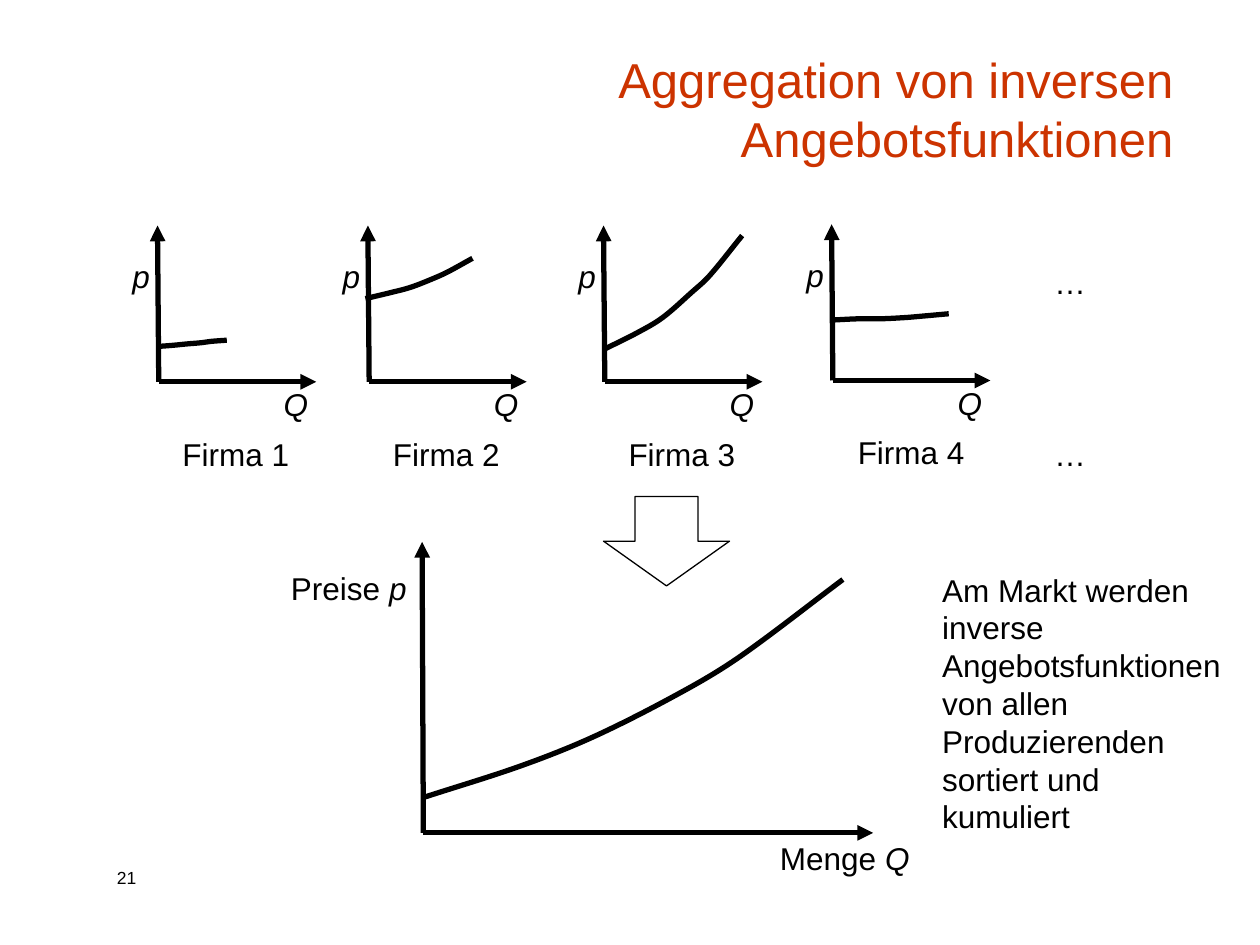
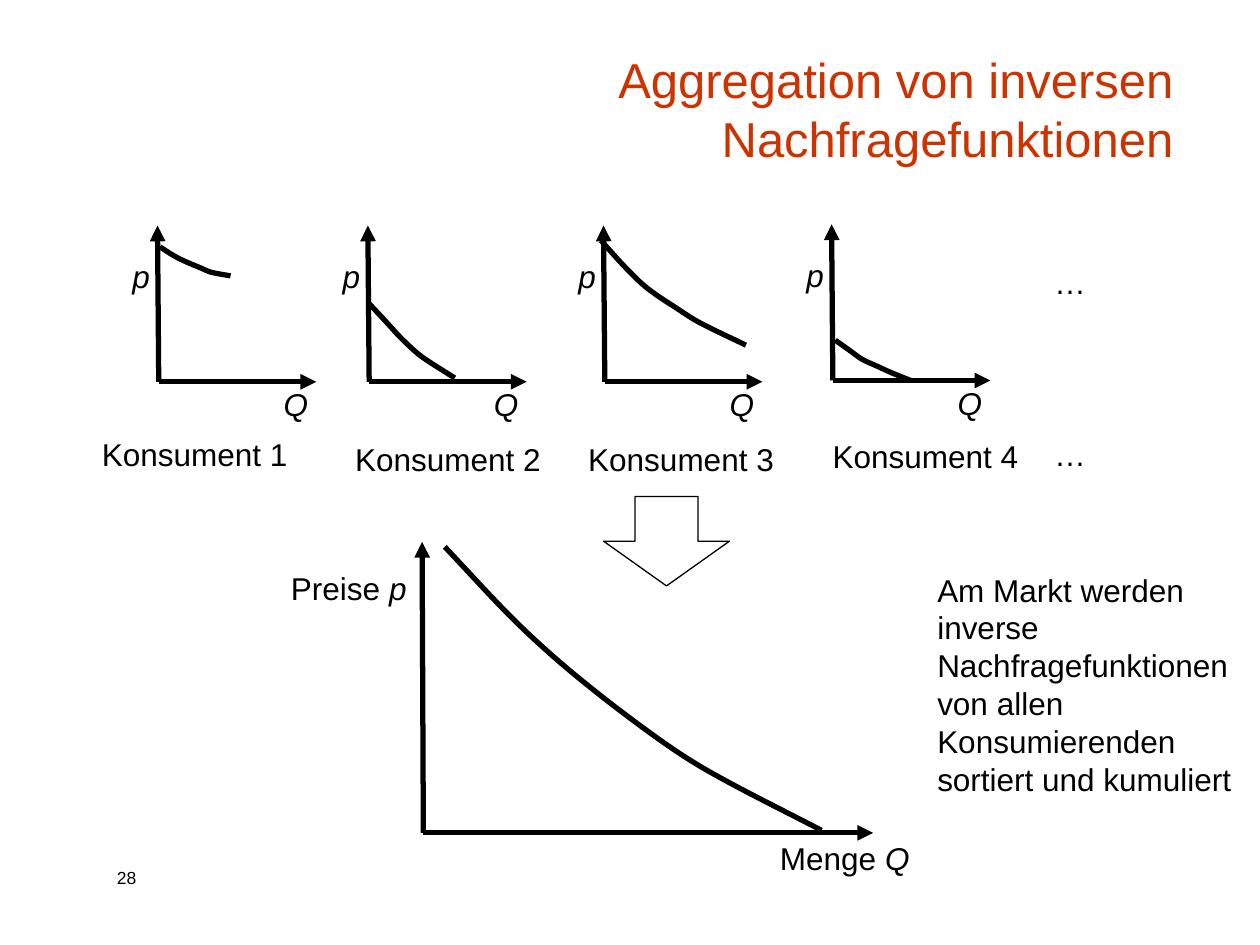
from dataclasses import dataclass

from lxml import etree
from pptx import Presentation
from pptx.dml.color import RGBColor
from pptx.enum.shapes import MSO_CONNECTOR, MSO_SHAPE
from pptx.enum.text import MSO_ANCHOR, PP_ALIGN
from pptx.oxml.ns import qn
from pptx.util import Inches, Pt

STRAIGHT = MSO_CONNECTOR.STRAIGHT
DOWN_ARROW = MSO_SHAPE.DOWN_ARROW
TOP, BOTTOM = MSO_ANCHOR.TOP, MSO_ANCHOR.BOTTOM
LEFT, RIGHT = PP_ALIGN.LEFT, PP_ALIGN.RIGHT

BLACK = RGBColor(0x00, 0x00, 0x00)
TITLE_RED = RGBColor(0xCC, 0x33, 0x00)
FONT = "Arial"

SMALL_BOXES = [(left, top, 1.25, 1.24)
               for left, top in ((1.26, 1.79), (2.93, 1.79), (4.8, 1.79), (6.61, 1.78))]
MARKET_BOX = (3.36, 4.3, 3.57, 2.31)


@dataclass
class Agent:
    name: str
    name_offset: tuple
    curve: list


@dataclass
class Aggregation:
    number: str
    title: str
    agents: list
    name_width: float
    market_curve: list
    caption: str
    caption_box: tuple


SUPPLY = Aggregation(
    "21", "Aggregation von inversen Angebotsfunktionen",
    [Agent("Firma 1", (0.09, 0.37),
           [(-0.01, 0.28), (0.12, 0.29), (0.22, 0.3), (0.34, 0.31), (0.41, 0.32), (0.54, 0.33)]),
     Agent("Firma 2", (0.09, 0.37),
           [(-0.03, 0.66), (0.18, 0.71), (0.33, 0.75), (0.51, 0.82), (0.62, 0.87), (0.82, 0.98)]),
     Agent("Firma 3", (0.09, 0.37),
           [(0, 0.26), (0.26, 0.39), (0.46, 0.51), (0.69, 0.71), (0.83, 0.84), (1.09, 1.16)]),
     Agent("Firma 4", (0.1, 0.37),
           [(-0.01, 0.48), (0.21, 0.49), (0.38, 0.49), (0.58, 0.5), (0.7, 0.51), (0.92, 0.53)])],
    1.07,
    [(0, 0.28), (0.8, 0.54), (1.39, 0.78), (2.11, 1.15), (2.53, 1.41), (3.33, 2.01)],
    "Am Markt werden inverse Angebotsfunktionen von allen Produzierenden sortiert und kumuliert",
    (7.38, 4.48, 2.44, 2.22))

DEMAND = Aggregation(
    "28", "Aggregation von inversen Nachfragefunktionen",
    [Agent("Konsument 1", (-0.55, 0.37),
           [(0.01, 1.07), (0.12, 1), (0.22, 0.95), (0.34, 0.9), (0.41, 0.87), (0.57, 0.84)]),
     Agent("Konsument 2", (-0.21, 0.41),
           [(0, 0.62), (0.14, 0.47), (0.25, 0.35), (0.39, 0.22), (0.49, 0.15), (0.68, 0.03)]),
     Agent("Konsument 3", (-0.23, 0.41),
           [(-0.03, 1.12), (0.17, 0.9), (0.34, 0.74), (0.59, 0.57), (0.75, 0.47), (1.12, 0.29)]),
     Agent("Konsument 4", (-0.1, 0.4),
           [(0.02, 0.32), (0.16, 0.22), (0.23, 0.17), (0.36, 0.11), (0.47, 0.06), (0.62, 0)])],
    1.71,
    [(0.17, 2.27), (0.74, 1.67), (1.22, 1.24), (1.86, 0.75), (2.28, 0.48), (3.16, 0.02)],
    "Am Markt werden inverse Nachfragefunktionen von allen Konsumierenden sortiert und kumuliert",
    (7.34, 4.48, 2.62, 1.92))


def add_text(slide, box, text, symbol="", size=18, color=BLACK, align=LEFT,
             anchor=TOP, inset=True):
    frame = slide.shapes.add_textbox(*map(Inches, box)).text_frame
    frame.word_wrap = True
    frame.vertical_anchor = anchor
    if not inset:
        frame.margin_left = frame.margin_right = frame.margin_top = frame.margin_bottom = 0
    paragraph = frame.paragraphs[0]
    paragraph.alignment = align
    paragraph.font.name = FONT
    paragraph.font.size = Pt(size)
    paragraph.font.color.rgb = color
    if text:
        paragraph.add_run().text = text
    if symbol:
        run = paragraph.add_run()
        run.text = symbol
        run.font.italic = True


def style_line(shape, width):
    shape.line.color.rgb = BLACK
    shape.line.width = Pt(width)


def add_axis(slide, start, end):
    axis = slide.shapes.add_connector(STRAIGHT, *map(Inches, start + end))
    style_line(axis, 3)
    properties = axis.line._get_or_add_ln()
    etree.SubElement(properties, qn("a:tailEnd"), type="triangle")
    etree.SubElement(axis._element.spPr, qn("a:effectLst"))


def bend_segments(curve, points):
    local = [(x - curve.left, y - curve.top) for x, y in points]
    padded = [local[0], *local, local[-1]]
    slopes = [(after[1] - before[1]) / (after[0] - before[0])
              for before, after in zip(padded, padded[2:])]
    segments = list(curve._element.iter(qn("a:lnTo")))
    for index, segment in enumerate(segments):
        (x0, y0), (x1, y1) = local[index:index + 2]
        third = (x1 - x0) / 3
        bend = etree.Element(qn("a:cubicBezTo"))
        for x, y in ((x0 + third, y0 + third * slopes[index]),
                     (x1 - third, y1 - third * slopes[index + 1]),
                     (x1, y1)):
            etree.SubElement(bend, qn("a:pt"), x=str(round(x)), y=str(round(y)))
        segment.getparent().replace(segment, bend)


def add_curve(slide, origin, knots):
    points = [(Inches(origin[0] + right), Inches(origin[1] - up)) for right, up in knots]
    builder = slide.shapes.build_freeform(*points[0])
    builder.add_line_segments(points[1:], close=False)
    curve = builder.convert_to_shape()
    bend_segments(curve, points)
    curve.shadow.inherit = False
    curve.fill.background()
    style_line(curve, 3)


def draw_axes(slide, box, knots):
    left, top, width, height = box
    origin = (left, top + height)
    add_axis(slide, origin, (left + width, origin[1]))
    add_axis(slide, origin, (left - 0.01, top))
    add_curve(slide, origin, knots)


def draw_agent(slide, box, agent, name_width):
    left, top, width, height = box
    bottom = top + height
    dx, dy = agent.name_offset
    add_text(slide, (left - 0.21, top + 0.25, 0.2, 0.3), "", "p", inset=False)
    add_text(slide, (left + width - 0.26, bottom + 0.03, 0.15, 0.3), "", "Q", inset=False)
    draw_axes(slide, box, agent.curve)
    add_text(slide, (left + dx, bottom + dy, name_width, 0.4), agent.name)


def draw_market(slide, box, knots):
    left, top, width, height = box
    add_text(slide, (left - 1.05, top + 0.22, 1.3, 0.3), "Preise", " p", inset=False)
    add_text(slide, (left + width - 0.74, top + height + 0.05, 1.11, 0.3),
             "Menge", " Q", inset=False)
    draw_axes(slide, box, knots)
    arrow = slide.shapes.add_shape(
        DOWN_ARROW, *map(Inches, (left + 1.43, top - 0.36, 1, 0.71)))
    arrow.shadow.inherit = False
    arrow.fill.background()
    style_line(arrow, 0.75)


def draw_frame(slide, title, number):
    add_text(slide, (0.83, 6.83, 0.67, 0.27), number, size=10)
    add_text(slide, (2.08, 0.41, 7.33, 0.97), title, size=28,
             color=TITLE_RED, align=RIGHT, anchor=BOTTOM)


def build_slide(deck, content):
    slide = deck.slides.add_slide(deck.slide_layouts[6])
    draw_frame(slide, content.title, content.number)
    for box, agent in zip(SMALL_BOXES, content.agents):
        draw_agent(slide, box, agent, content.name_width)
    for ellipsis_top in (2.04, 3.4):
        add_text(slide, (8.27, ellipsis_top, 1.04, 0.4), "…")
    draw_market(slide, MARKET_BOX, content.market_curve)
    add_text(slide, content.caption_box, content.caption)


def main():
    deck = Presentation()
    deck.slide_width, deck.slide_height = Inches(10), Inches(7.5)
    for content in (SUPPLY, DEMAND):
        build_slide(deck, content)
    deck.save("out.pptx")


if __name__ == "__main__":
    main()
